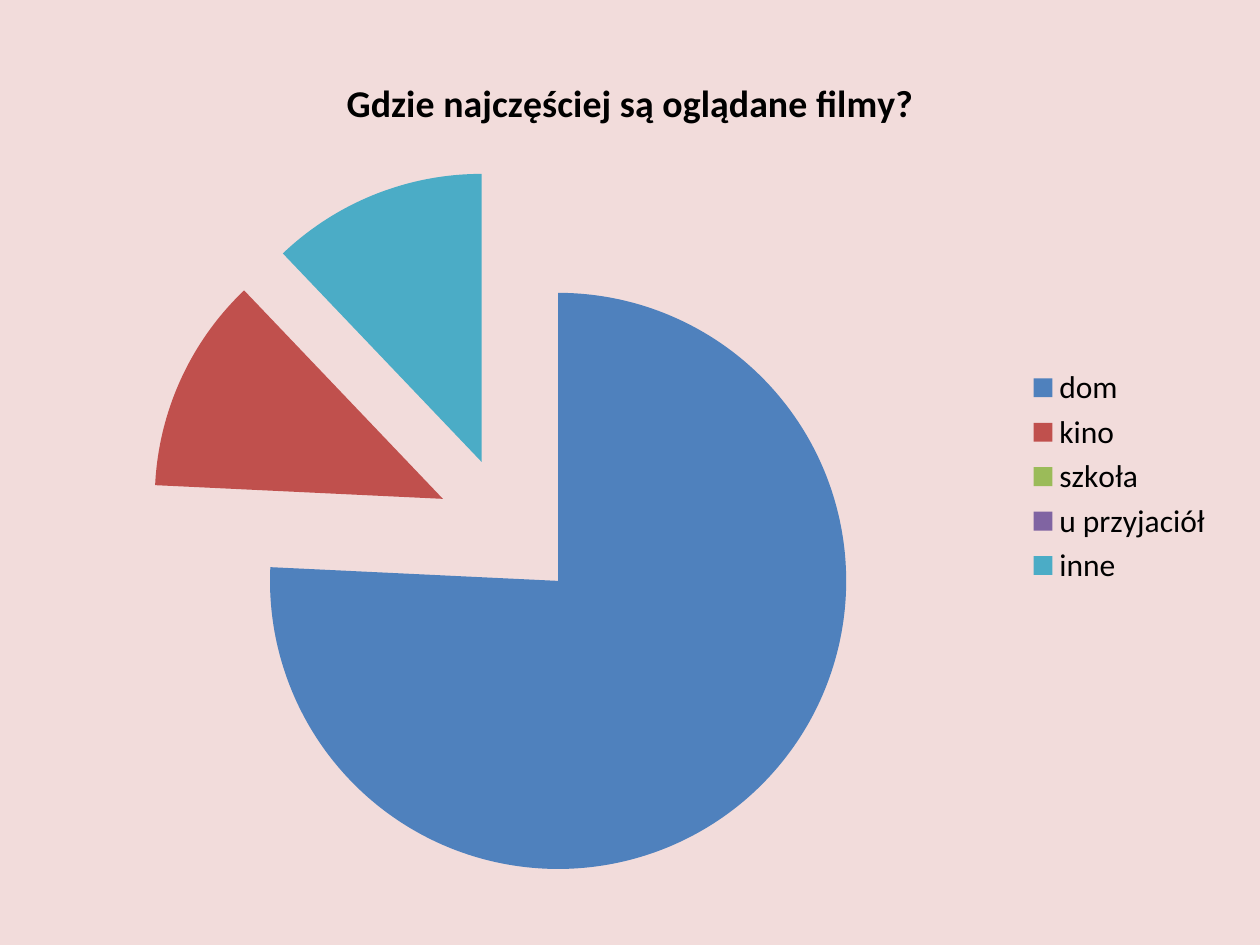
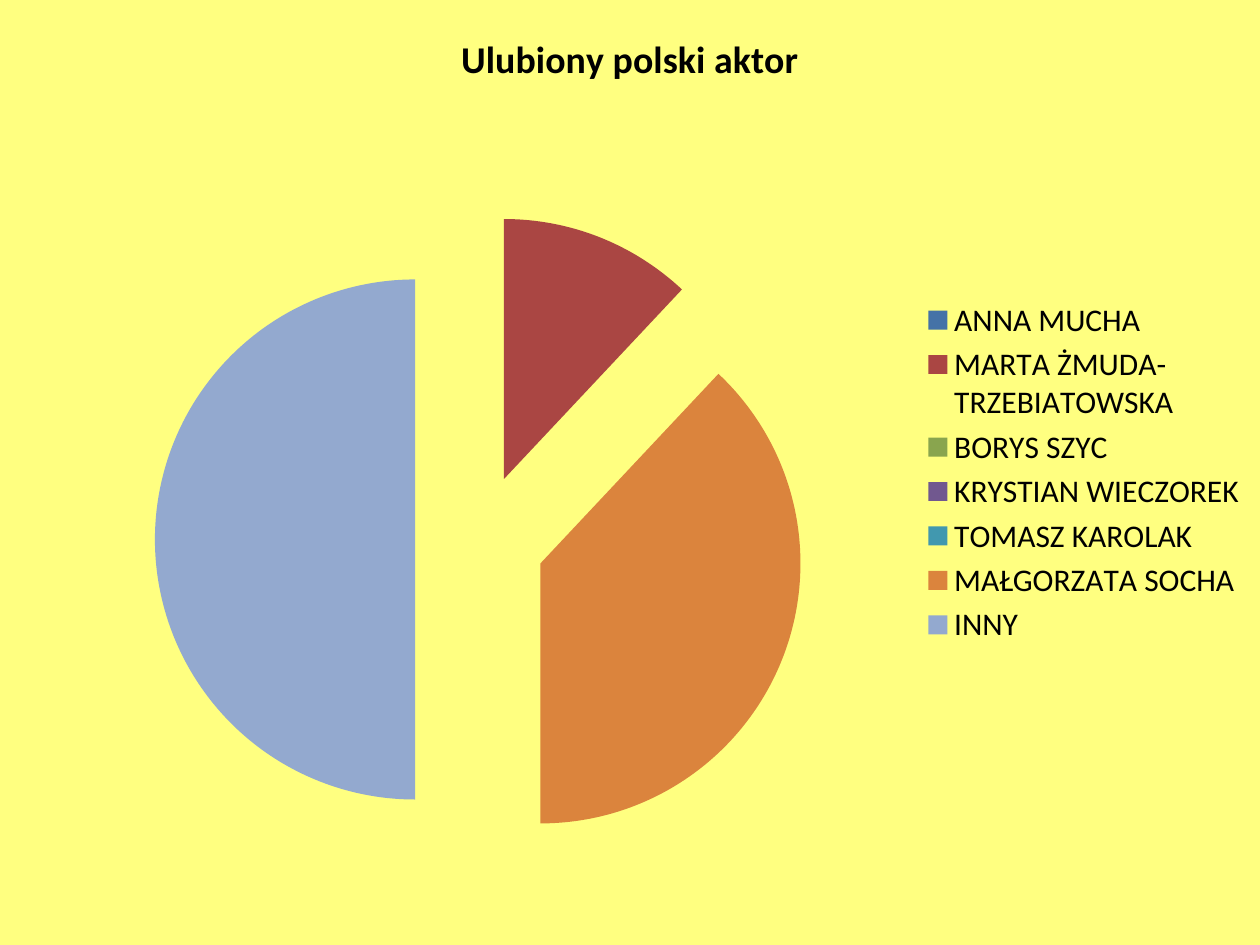
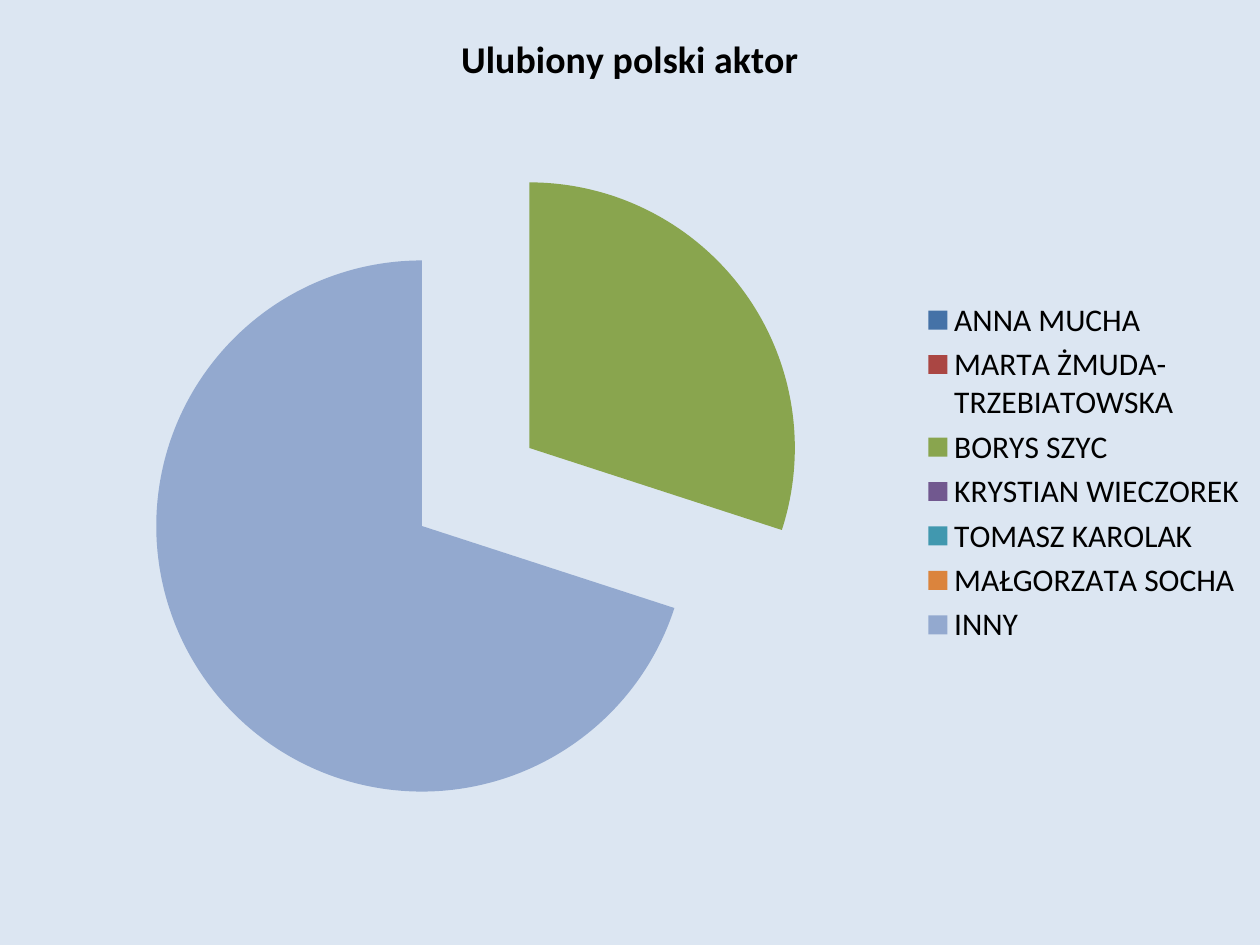
import pptx
import pptx.chart.data
import pptx.dml.color
import pptx.enum.chart
import pptx.oxml
import pptx.util
from pptx.util import Cm

FONT = "Calibri"
TEXT_COLOUR = "000000"
TITLE_SIZE, LEGEND_SIZE = 21.6, 18
EXPLOSION = 25
PLACE_COLOURS = ["4F81BD", "C0504D", "9BBB59", "8064A2", "4BACC6"]
ACTOR_COLOURS = ["4572A7", "AA4643", "89A54E", "71588F", "4198AF", "DB843D", "93A9CF"]
PLACES = ["dom ", "kino", "szkoła", "u przyjaciół", "inne"]
ACTORS = ["ANNA MUCHA", "MARTA ŻMUDA-TRZEBIATOWSKA", "BORYS SZYC",
          "KRYSTIAN WIECZOREK", "TOMASZ KAROLAK", "MAŁGORZATA SOCHA", "INNY"]
FULL_PAGE = (Cm(0), Cm(0), Cm(25.4), Cm(19.05))


def colour(value):
    return pptx.dml.color.RGBColor.from_string(value)


def style_font(font, size, bold=False):
    font.name = FONT
    font.size = pptx.util.Pt(size)
    font.bold = bold
    font.color.rgb = colour(TEXT_COLOUR)


def place_plot(chart, area):
    """Fix the inner plot area; area holds x, y, width, height as chart fractions."""
    plot_area = chart._chartSpace.chart.plotArea
    for old in plot_area.findall(pptx.oxml.ns.qn("c:layout")):
        plot_area.remove(old)
    modes = "".join(f'<c:{side}Mode val="edge"/>' for side in "xy")
    sizes = "".join(f'<c:{side} val="{value}"/>' for side, value in zip("xywh", area))
    plot_area.insert(0, pptx.oxml.parse_xml(
        f'<c:layout {pptx.oxml.ns.nsdecls("c")}><c:manualLayout>'
        f'<c:layoutTarget val="inner"/>{modes}{sizes}</c:manualLayout></c:layout>'))


def explode_slices(series):
    explosion = pptx.oxml.parse_xml(
        f'<c:explosion {pptx.oxml.ns.nsdecls("c")} val="{EXPLOSION}"/>')
    series.format.fill
    series._element.spPr.addnext(explosion)


def add_pie(page, box, title, names, values, colours, area):
    data = pptx.chart.data.CategoryChartData()
    data.categories = names
    data.add_series("Series 1", values)
    chart = page.shapes.add_chart(pptx.enum.chart.XL_CHART_TYPE.PIE, *box, data).chart
    style_font(chart.font, LEGEND_SIZE)

    chart.has_title = True
    span = chart.chart_title.text_frame.paragraphs[0].add_run()
    span.text = title
    style_font(span.font, TITLE_SIZE, bold=True)
    chart.chart_title.include_in_layout = False

    chart.has_legend = True
    chart.legend.position = pptx.enum.chart.XL_LEGEND_POSITION.RIGHT
    chart.legend.include_in_layout = False
    style_font(chart.legend.font, LEGEND_SIZE)

    plot = chart.plots[0]
    plot.vary_by_categories = True
    explode_slices(plot.series[0])
    for index, slice_colour in enumerate(colours):
        fill = plot.series[0].points[index].format.fill
        fill.solid()
        fill.fore_color.rgb = colour(slice_colour)
    place_plot(chart, area)


def add_page(deck, background):
    page = deck.slides.add_slide(deck.slide_layouts[6])
    page.background.fill.solid()
    page.background.fill.fore_color.rgb = colour(background)
    return page


def main():
    deck = pptx.Presentation()
    deck.slide_width, deck.slide_height = FULL_PAGE[2:]

    add_pie(add_page(deck, "F2DCDB"), (Cm(0.71), Cm(0.91), Cm(24), Cm(17.4)),
            "Gdzie najczęściej są oglądane filmy?", PLACES, [75, 12, 0, 0, 12],
            PLACE_COLOURS, (0.095, 0.143, 0.605, 0.835))
    actor_pages = [
        ("FFFF80", [0, 12, 0, 0, 0, 38, 50], (0.123, 0.227, 0.516, 0.688)),
        ("DCE6F2", [0, 0, 30, 0, 0, 0, 70], (0.114, 0.164, 0.527, 0.703)),
    ]
    for background, values, area in actor_pages:
        add_pie(add_page(deck, background), FULL_PAGE, "Ulubiony polski aktor",
                ACTORS, values, ACTOR_COLOURS, area)
    deck.save("out.pptx")


if __name__ == "__main__":
    main()
